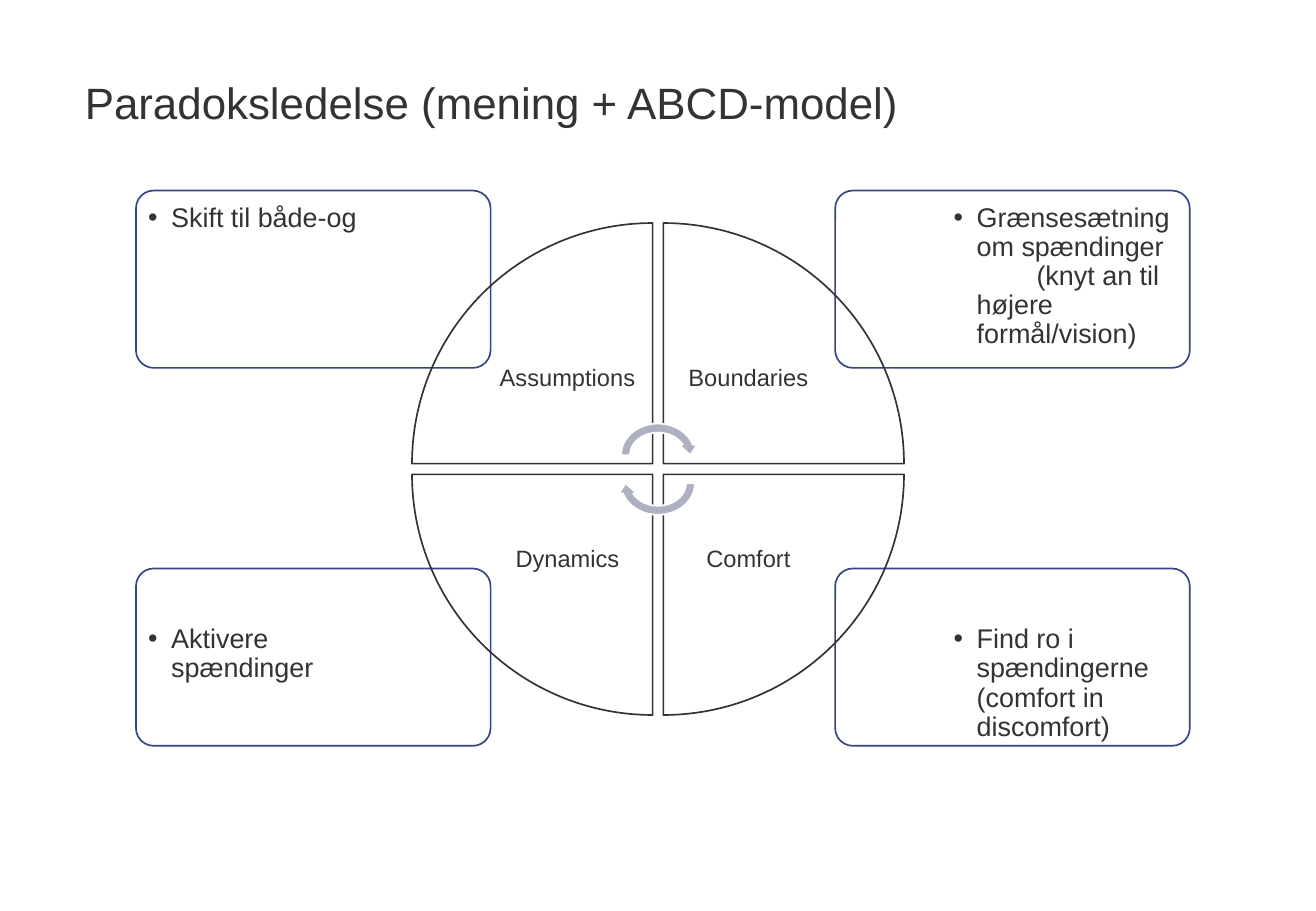
from pptx import Presentation
from pptx.dml.color import RGBColor
from pptx.enum.shapes import MSO_SHAPE as Shape
from pptx.enum.text import MSO_ANCHOR as Anchor, PP_ALIGN as Align
from pptx.oxml.ns import qn
from pptx.util import Pt
from lxml import etree

DARK = RGBColor(0x33, 0x33, 0x33)
BLUE = RGBColor(0x36, 0x45, 0x84)
GREY = RGBColor(0xAE, 0xB1, 0xC2)
WHITE = RGBColor(0xFF, 0xFF, 0xFF)

CENTER_X, CENTER_Y = 390, 278
HALF_GAP = 3.2
WEDGE, LABEL = 142.6, 100.8
CARD_W, CARD_H = 210.2, 105.1
CARD_X, CARD_Y = (80.6, 495), (113, 337)
NOTE_X, NOTE_Y = (82.8, 560.2), (115.9, 365.8)
NOTE_W, NOTE_H = 142.6, 74.2
HANGING = 13.7

# column, row, wedge rotation, label, paragraphs of the note
QUADRANTS = [
    (0, 0, 0, "Assumptions", ["Skift til både-og"]),
    (1, 0, 90, "Boundaries", ["Grænsesætning om spændinger",
                              "(knyt an til højere formål/vision)"]),
    (1, 1, 180, "Comfort", ["Find ro i spændingerne (comfort in discomfort)"]),
    (0, 1, 270, "Dynamics", ["Aktivere spændinger"]),
]


def add_outline(page, kind, left, top, width, height, line, fill=None, rotation=0):
    shape = page.shapes.add_shape(kind, Pt(left), Pt(top), Pt(width), Pt(height))
    shape.shadow.inherit = False
    shape.rotation = rotation
    if fill is None:
        shape.fill.background()
    else:
        shape.fill.solid()
        shape.fill.fore_color.rgb = fill
    shape.line.color.rgb = line
    shape.line.width = Pt(1)
    return shape


def set_indent(para, first_line, bullet):
    props = para._p.get_or_add_pPr()
    props.set("marL", str(Pt(HANGING)))
    props.set("indent", str(Pt(first_line)))
    if bullet:
        font = etree.SubElement(props, qn("a:buFont"))
        font.set("typeface", "Arial")
        etree.SubElement(props, qn("a:buChar")).set("char", "•")
    else:
        etree.SubElement(props, qn("a:buNone"))


def add_text(page, paragraphs, left, top, width, height, size=16,
             align=Align.LEFT, anchor=Anchor.TOP, inset=(5, 5), bullets=False):
    box = page.shapes.add_textbox(Pt(left), Pt(top), Pt(width), Pt(height))
    frame = box.text_frame
    frame.word_wrap = True
    frame.vertical_anchor = anchor
    frame.margin_left = frame.margin_right = Pt(inset[0])
    frame.margin_top = frame.margin_bottom = Pt(inset[1])
    for index, text in enumerate(paragraphs):
        para = frame.add_paragraph() if index else frame.paragraphs[0]
        para.alignment = align
        para.line_spacing = 0.9
        if bullets:
            # A continuation starts further in and has no bullet
            set_indent(para, 35.5 if index else -HANGING, bullet=not index)
        span = para.add_run()
        span.text = text
        span.font.name = "Arial"
        span.font.size = Pt(size)
        span.font.color.rgb = DARK


def add_card(page, column, row, note):
    card = add_outline(page, Shape.ROUNDED_RECTANGLE, CARD_X[column], CARD_Y[row],
                       CARD_W, CARD_H, BLUE, WHITE)
    card.adjustments[0] = 0.1
    add_text(page, note, NOTE_X[column], NOTE_Y[row], NOTE_W, NOTE_H, bullets=True)


def corner(column, row, size):
    """Top left of a square that touches the central cross."""
    return (CENTER_X + (HALF_GAP if column else -HALF_GAP - size),
            CENTER_Y + (HALF_GAP if row else -HALF_GAP - size))


def add_wedge(page, column, row, rotation, label):
    add_outline(page, Shape.PIE_WEDGE, *corner(column, row, WEDGE), WEDGE, WEDGE,
                DARK, rotation=rotation)
    add_text(page, [label], *corner(column, row, LABEL), LABEL, LABEL, size=14,
             align=Align.CENTER, anchor=Anchor.MIDDLE, inset=(7.9, 7.9))


def main():
    deck = Presentation()
    deck.slide_width, deck.slide_height = Pt(780), Pt(540)
    page = deck.slides.add_slide(deck.slide_layouts[6])

    # Cards with notes behind the wheel
    for column, row, _, _, note in QUADRANTS:
        add_card(page, column, row, note)

    # Wheel of four wedges
    for column, row, rotation, label, _ in QUADRANTS:
        add_wedge(page, column, row, rotation, label)

    # Cycle arrows in the middle
    for top, rotation in ((248.4, 0), (265, 180)):
        add_outline(page, Shape.CIRCULAR_ARROW, CENTER_X - 24.6, top, 49.2, 42.8,
                    WHITE, GREY, rotation)

    # Title
    add_text(page, ["Paradoksledelse (mening + ABCD-model)"], 43.2, 34.6, 629.3, 45.4,
             size=26, anchor=Anchor.BOTTOM, inset=(7.2, 3.6))

    deck.save("out.pptx")


if __name__ == "__main__":
    main()
